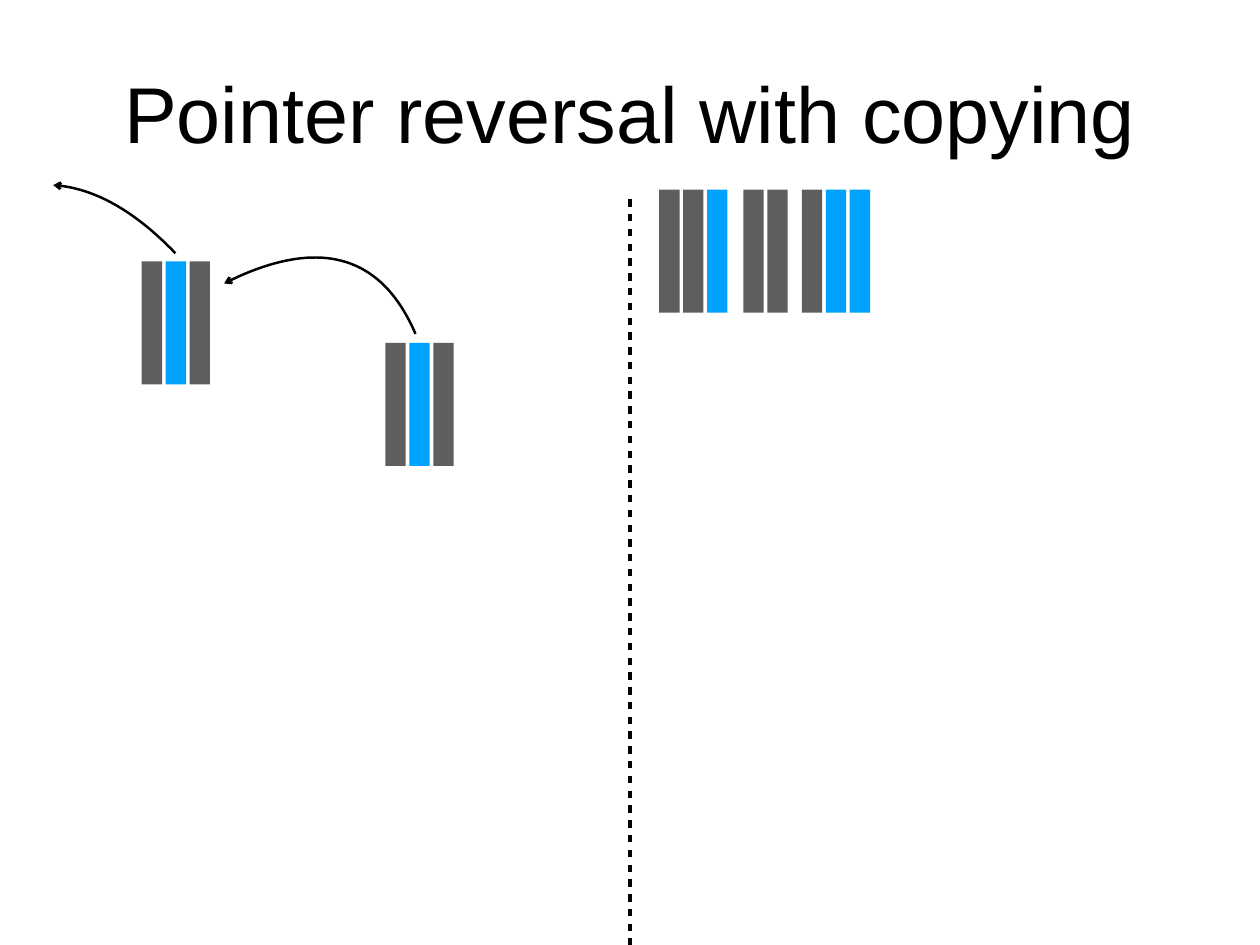
import pptx
import pptx.util
import pptx.dml.color
import pptx.enum.shapes
import pptx.enum.text
import pptx.oxml
import pptx.oxml.ns

PX = 9144  # EMU per px, 100 px to the inch
COLORS = {"ink": "000000", "paper": "FFFFFF", "live": "00A2FF", "dead": "5E5E5E"}
FIELDS = {"d": "dead", "l": "live"}
BAR_W, BAR_H, PITCH = 23, 139, 27
CURVE_STEPS = 40


def px(n):
    return pptx.util.Emu(round(n * PX))


def rgb(name):
    return pptx.dml.color.RGBColor.from_string(COLORS[name])


def add_ln_part(sp, xml):
    """Append an element such as a dash or an arrowhead to a line."""
    ns = pptx.oxml.ns.nsdecls("a")
    sp.line._get_or_add_ln().append(pptx.oxml.parse_xml(xml.format(ns=ns)))


def style_line(sp, width):
    sp.line.color.rgb = rgb("ink")
    sp.line.width = pptx.util.Pt(width)


def add_title(slide, text, x, y, w, h):
    sp = slide.shapes.title
    sp.left, sp.top, sp.width, sp.height = px(x), px(y), px(w), px(h)
    tf = sp.text_frame
    tf.word_wrap = True
    tf.auto_size = pptx.enum.text.MSO_AUTO_SIZE.NONE
    tf.vertical_anchor = pptx.enum.text.MSO_ANCHOR.MIDDLE
    tf.margin_left = tf.margin_right = tf.margin_top = tf.margin_bottom = px(6)
    p = tf.paragraphs[0]
    p.alignment = pptx.enum.text.PP_ALIGN.CENTER
    r = p.add_run()
    r.text = text
    r.font.name = "Arial"
    r.font.size = pptx.util.Pt(64.3)
    r.font.color.rgb = rgb("ink")


def add_cell(slide, x, y, fields):
    """Draw one heap object as a row of bars, one per field."""
    for i, field in enumerate(fields):
        sp = slide.shapes.add_shape(
            pptx.enum.shapes.MSO_SHAPE.RECTANGLE,
            px(x + i * PITCH), px(y), px(BAR_W), px(BAR_H))
        sp.shadow.inherit = False
        sp.fill.solid()
        sp.fill.fore_color.rgb = rgb(FIELDS[field])
        sp.line.fill.background()


def add_pointer(slide, x, y, controls):
    """Draw a curved arrow along a cubic Bézier, relative to x, y."""
    points = []
    for i in range(CURVE_STEPS + 1):
        t = i / CURVE_STEPS
        weights = ((1 - t) ** 3, 3 * t * (1 - t) ** 2, 3 * t * t * (1 - t), t ** 3)
        points.append((px(x + sum(k * c[0] for k, c in zip(weights, controls))),
                       px(y + sum(k * c[1] for k, c in zip(weights, controls)))))
    builder = slide.shapes.build_freeform(*points[0], scale=1.0)
    builder.add_line_segments(points[1:], close=False)
    sp = builder.convert_to_shape()
    sp.shadow.inherit = False
    sp.fill.background()
    style_line(sp, 2)
    add_ln_part(sp, '<a:round {ns}/>')
    add_ln_part(sp, '<a:tailEnd {ns} type="arrow"/>')


def add_divider(slide, x, top, bottom):
    sp = slide.shapes.add_connector(
        pptx.enum.shapes.MSO_CONNECTOR.STRAIGHT, px(x), px(top), px(x), px(bottom))
    style_line(sp, 3)
    add_ln_part(sp, '<a:custDash {ns}><a:ds d="200000" sp="200000"/></a:custDash>')
    sp._element.spPr.append(pptx.oxml.parse_xml(
        "<a:effectLst %s/>" % pptx.oxml.ns.nsdecls("a")))


def add_from_space(slide, x, y):
    """Left half: scattered objects linked by reversed pointers."""
    add_cell(slide, x + 100, y + 86, "dld")
    add_cell(slide, x + 375, y + 178, "dld")
    add_pointer(slide, x, y, [(409, 168), (370, 77), (298, 58), (193, 111)])
    add_pointer(slide, x, y, [(138, 77), (92, 29), (46, 3), (0, 0)])


def add_to_space(slide, x, y):
    """Right half: objects copied side by side."""
    for offset, fields in ((0, "ddl"), (95, "dd"), (161, "dll")):
        add_cell(slide, x + offset, y, fields)


def main():
    prs = pptx.Presentation()
    prs.slide_width, prs.slide_height = px(1422), px(1067)
    slide = prs.slides.add_slide(prs.slide_layouts[5])
    slide.background.fill.solid()
    slide.background.fill.fore_color.rgb = rgb("paper")

    add_title(slide, "Pointer reversal with copying", 104, 28, 1214, 196)
    add_divider(slide, 711, 225, 1067)
    add_from_space(slide, 60, 209)
    add_to_space(slide, 744, 214)
    prs.save("out.pptx")


if __name__ == "__main__":
    main()
